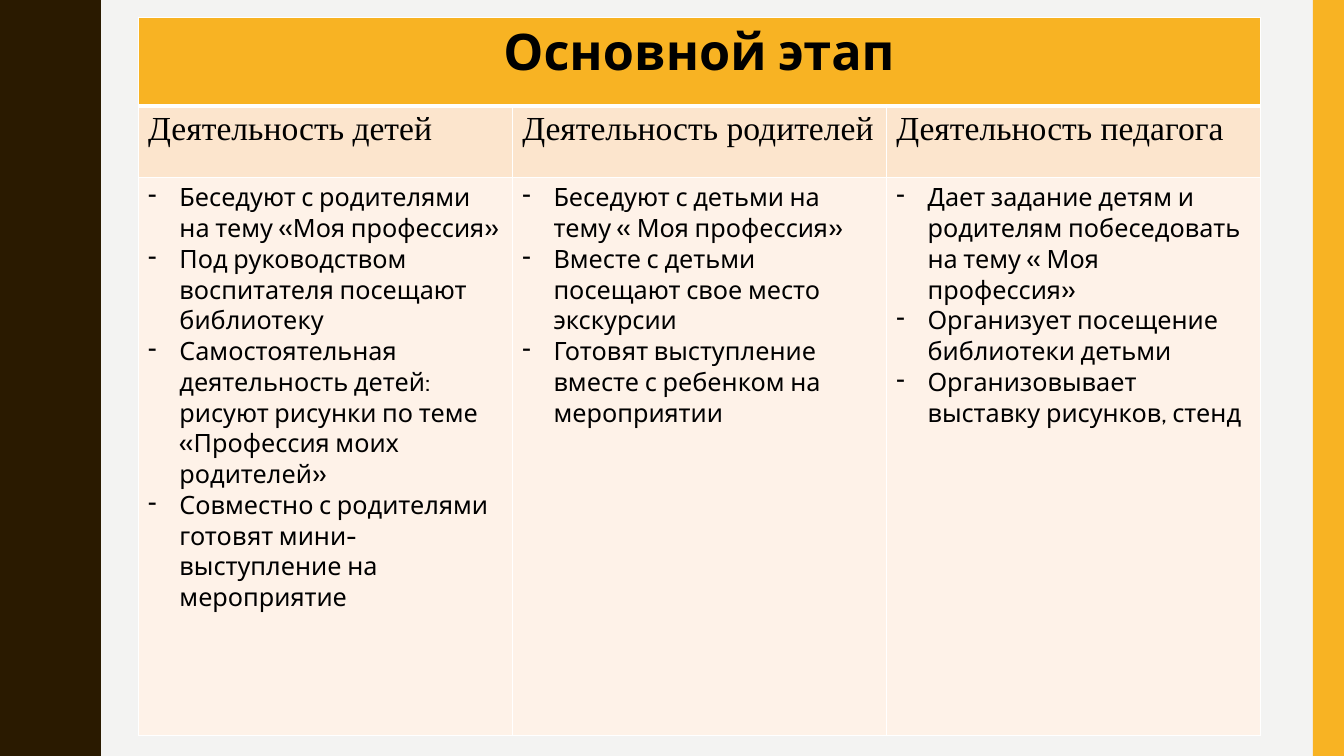
from lxml import etree
from pptx import Presentation
from pptx.dml.color import RGBColor
from pptx.enum.shapes import MSO_SHAPE
from pptx.enum.text import PP_ALIGN
from pptx.oxml.ns import qn
from pptx.util import Inches, Pt

RECT = MSO_SHAPE.RECTANGLE
CENTER, LEFT = PP_ALIGN.CENTER, PP_ALIGN.LEFT
C = {"bg": "F3F3F2", "wave": "2A1A00", "accent": "F8B323", "head": "FCE5CD",
     "body": "FEF2E8", "border": "FFFFFF", "text": "000000"}

TITLE = "Основной этап"
COLUMNS = [
    ("Деятельность детей", [
        "Беседуют с родителями на тему «Моя профессия»",
        "Под руководством воспитателя посещают библиотеку",
        "Самостоятельная деятельность детей: рисуют рисунки по теме «Профессия моих родителей»",
        "Совместно с родителями готовят мини- выступление на мероприятие"]),
    ("Деятельность родителей", [
        "Беседуют с детьми на тему « Моя профессия»",
        "Вместе с детьми посещают свое место экскурсии",
        "Готовят выступление вместе с ребенком на мероприятии"]),
    ("Деятельность педагога", [
        "Дает задание детям и родителям побеседовать на тему « Моя профессия»",
        "Организует посещение библиотеки детьми",
        "Организовывает выставку рисунков, стенд"]),
]


def style_cell(cell, fill, bottom=1):
    """Fill the cell and give it white borders; bottom is the lower width in points."""
    cell.fill.solid()
    cell.fill.fore_color.rgb = RGBColor.from_string(C[fill])
    tcPr = cell._tc.get_or_add_tcPr()
    for i, (side, width) in enumerate([("L", 1), ("R", 1), ("T", 1), ("B", bottom)]):
        ln = etree.Element(qn(f"a:ln{side}"), w=str(Pt(width)))
        solid = etree.SubElement(ln, qn("a:solidFill"))
        etree.SubElement(solid, qn("a:srgbClr"), val=C["border"])
        tcPr.insert(i, ln)


def write_cell(cell, lines, font, size, bold=False, align=LEFT, bullet=False):
    tf = cell.text_frame
    for i, line in enumerate(lines):
        p = tf.add_paragraph() if i else tf.paragraphs[0]
        p.alignment = align
        if bullet:
            pPr = p._p.get_or_add_pPr()
            pPr.set("marL", str(Inches(0.31)))
            pPr.set("indent", str(Inches(-0.31)))
            etree.SubElement(pPr, qn("a:buChar"), char="-")
        r = p.add_run()
        r.text = line
        r.font.name, r.font.size, r.font.bold = font, Pt(size), bold
        r.font.color.rgb = RGBColor.from_string(C["text"])


prs = Presentation()
prs.slide_width, prs.slide_height = Inches(13.33), Inches(7.5)
s = prs.slides.add_slide(prs.slide_layouts[6])
s.background.fill.solid()
s.background.fill.fore_color.rgb = RGBColor.from_string(C["bg"])

# Wavy band: half a wave, mirrored and repeated five times
half = [(0.78, 0), (0.78, 0.07), (0.79, 0.14), (0.8, 0.2), (0.81, 0.25), (0.83, 0.29),
        (0.85, 0.33), (0.87, 0.38), (0.89, 0.42), (0.91, 0.46), (0.93, 0.5),
        (0.95, 0.55), (0.96, 0.61), (0.97, 0.68), (0.97, 0.75)]
period = 1.5
wave = half + [(x, period - y) for x, y in half[-2::-1]]
points = [(x, n * period + y) for n in range(5) for x, y in wave]
fb = s.shapes.build_freeform(0, 0, scale=Inches(1))
fb.add_line_segments(points + [(0, 7.5)], close=True)
band = fb.convert_to_shape()
stripe = s.shapes.add_shape(RECT, Inches(13.02), 0, Inches(0.31), Inches(7.5))
for sp, color in [(band, "wave"), (stripe, "accent")]:
    sp.shadow.inherit = False
    sp.fill.solid()
    sp.fill.fore_color.rgb = RGBColor.from_string(C[color])
    sp.line.fill.background()

# Table
table = s.shapes.add_table(3, 3, Inches(1.37), Inches(0.17), Inches(11.13), Inches(7.13)).table
table.first_row = table.horz_banding = False
for row, height in zip(table.rows, [0.88, 0.71, 5.54]):
    row.height = Inches(height)
for col in table.columns:
    col.width = Inches(3.71)

table.cell(0, 0).merge(table.cell(0, 2))
write_cell(table.cell(0, 0), [TITLE], "Cabin", 36, bold=True, align=CENTER)
for c, (heading, items) in enumerate(COLUMNS):
    style_cell(table.cell(0, c), "accent", bottom=3)
    style_cell(table.cell(1, c), "head")
    style_cell(table.cell(2, c), "body")
    write_cell(table.cell(1, c), [heading], "Times New Roman", 24)
    write_cell(table.cell(2, c), items, "Cabin", 18, bullet=True)

prs.save("out.pptx")
